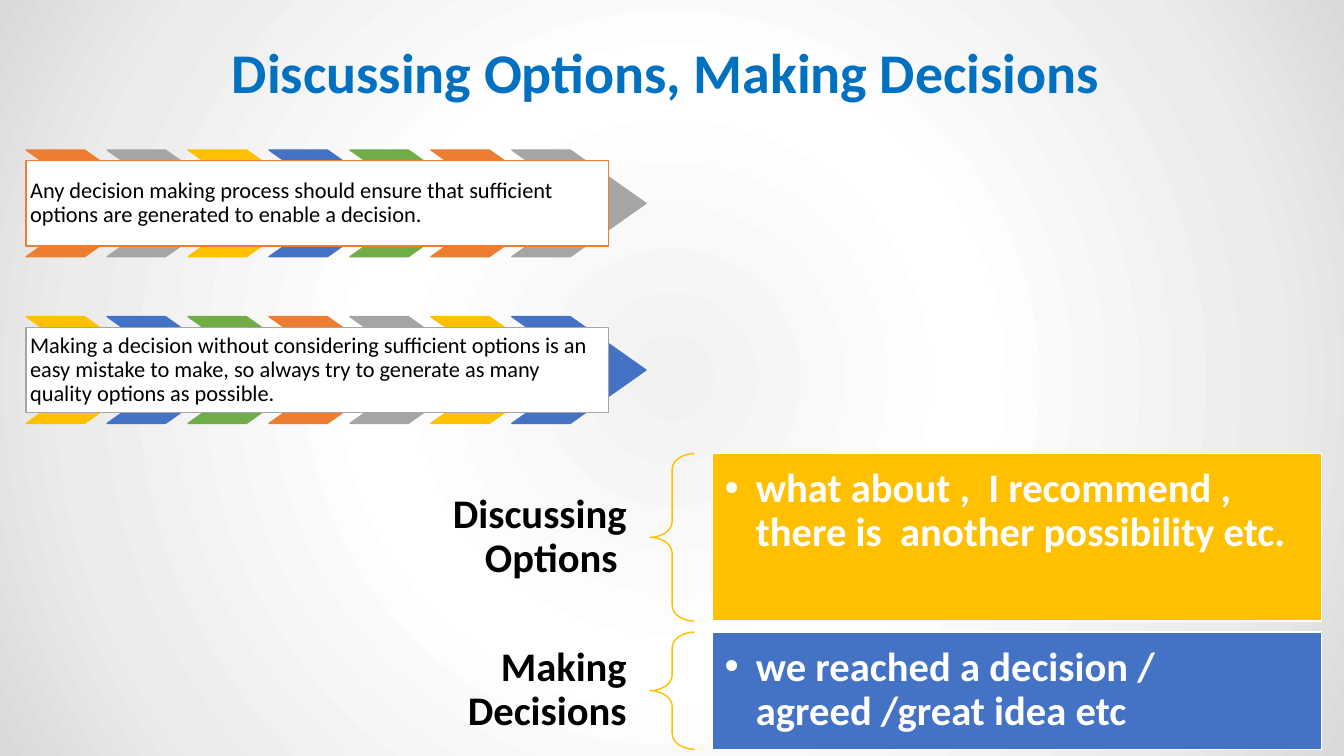
from pptx import Presentation
from pptx.dml.color import RGBColor
from pptx.enum.shapes import MSO_SHAPE as Preset
from pptx.enum.text import MSO_ANCHOR as Anchor, MSO_AUTO_SIZE as AutoSize, PP_ALIGN as Align
from pptx.oxml import parse_xml
from pptx.oxml.ns import nsdecls
from pptx.util import Cm, Pt

BLACK = RGBColor(0x00, 0x00, 0x00)
WHITE = RGBColor(0xFF, 0xFF, 0xFF)
TITLE_BLUE = RGBColor(0x00, 0x70, 0xC0)
ORANGE = RGBColor(0xED, 0x7D, 0x31)
GREY = RGBColor(0xA5, 0xA5, 0xA5)
YELLOW = RGBColor(0xFF, 0xC0, 0x00)
BLUE = RGBColor(0x44, 0x72, 0xC4)
GREEN = RGBColor(0x70, 0xAD, 0x47)
ACCENTS = [ORANGE, GREY, YELLOW, BLUE, GREEN]
BACKGROUND_STOPS = [
    (0, RGBColor(0xF2, 0xF2, 0xF2)),
    (39, WHITE),
    (78, RGBColor(0xEC, 0xEC, 0xEC)),
    (100, RGBColor(0xD9, 0xD9, 0xD9)),
]

FONT = "Calibri"
TWO_CONTENT_LAYOUT = 3
CHEVRON_COUNT = 7
CHEVRON_STEP = 2.04
ROW_LEFT = 0.66

# top in cm, first accent, box line, statement
STATEMENTS = [
    (3.78, 0, ORANGE,
     "Any decision making process should ensure that sufficient options "
     "are generated to enable a decision."),
    (7.98, 2, GREY,
     "Making a decision without considering sufficient options is an easy mistake "
     "to make, so always try to generate as many quality options as possible."),
]
# top and height in cm, label top, fill, label, phrases
PHRASE_GROUPS = [
    (11.43, 4.22, 12.19, YELLOW, "Discussing Options ",
     "what about ,  I recommend , there is  another possibility etc."),
    (15.93, 2.95, 16.05, BLUE, "Making Decisions",
     "we reached a decision / agreed /great idea etc"),
]


def set_radial_background(slide):
    stops = "".join(
        f'<a:gs pos="{position * 1000}"><a:srgbClr val="{color}"/></a:gs>'
        for position, color in BACKGROUND_STOPS)
    background = parse_xml(
        f'<p:bg {nsdecls("p", "a")}><p:bgPr><a:gradFill><a:gsLst>{stops}</a:gsLst>'
        '<a:path path="circle"><a:fillToRect l="50000" t="50000" r="50000" b="50000"/>'
        '</a:path></a:gradFill><a:effectLst/></p:bgPr></p:bg>')
    slide._element.cSld.insert(0, background)


def place(shape, left, top, width, height):
    shape.left, shape.top = Cm(left), Cm(top)
    shape.width, shape.height = Cm(width), Cm(height)


def paint(shape, fill, line):
    if fill is None:
        shape.fill.background()
    else:
        shape.fill.solid()
        shape.fill.fore_color.rgb = fill
    shape.line.color.rgb = line
    shape.line.width = Pt(1)


def add_preset(slide, preset, box, fill, line):
    shape = slide.shapes.add_shape(preset, *map(Cm, box))
    shape.shadow.inherit = False
    paint(shape, fill, line)
    return shape


def write(shape, text, size, color, bold=False, align=Align.LEFT,
          anchor=Anchor.MIDDLE, insets=(0.1, 0.1)):
    """Fill a shape with one paragraph; insets are horizontal and vertical, in cm."""
    frame = shape.text_frame
    frame.word_wrap = True
    frame.auto_size = AutoSize.NONE
    frame.vertical_anchor = anchor
    frame.margin_left = frame.margin_right = Cm(insets[0])
    frame.margin_top = frame.margin_bottom = Cm(insets[1])
    paragraph = frame.paragraphs[0]
    paragraph.alignment = align
    paragraph.line_spacing = 0.9
    paragraph.space_before = Pt(0)
    run = paragraph.add_run()
    run.text = text
    run.font.name = FONT
    run.font.size = Pt(size)
    run.font.bold = bold
    run.font.color.rgb = color
    return paragraph


def add_statement(slide, top, first_accent, line, text):
    """Draw a row of chevrons with a statement box across it."""
    for index in range(CHEVRON_COUNT):
        color = ACCENTS[(first_accent + index) % len(ACCENTS)]
        box = (ROW_LEFT + index * CHEVRON_STEP, top, 3.38, 2.69)
        chevron = add_preset(slide, Preset.CHEVRON, box, color, color)
        chevron.adjustments[0] = 0.71
    box = add_preset(slide, Preset.RECTANGLE, (ROW_LEFT, top + 0.27, 14.68, 2.15), WHITE, line)
    write(box, text, 16, BLACK)


def add_phrase_group(slide, body, top, height, label_top, fill, label, phrases):
    """Draw a label, its brace and the bulleted list of phrases."""
    label_box = slide.shapes.add_textbox(*map(Cm, (10.74, label_top, 5.64, 2.69)))
    write(label_box, label, 29, BLACK, bold=True, align=Align.RIGHT, insets=(0.58, 0.2))

    brace = add_preset(slide, Preset.LEFT_BRACE, (16.38, top, 1.12, height), None, YELLOW)
    brace.adjustments[0] = 0.35

    place(body, 17.96, top, 15.34, height)
    paint(body, fill, WHITE)
    paragraph = write(body, phrases, 29, WHITE, bold=True, anchor=Anchor.TOP,
                      insets=(0.3, 0.35))
    properties = paragraph._p.get_or_add_pPr()
    properties.set("marL", str(Cm(0.79)))
    properties.set("indent", str(-Cm(0.79)))
    properties.append(parse_xml(f'<a:buChar {nsdecls("a")} char="•"/>'))


def main():
    presentation = Presentation()
    presentation.slide_width, presentation.slide_height = Cm(33.87), Cm(19.05)
    slide = presentation.slides.add_slide(presentation.slide_layouts[TWO_CONTENT_LAYOUT])
    set_radial_background(slide)

    title, *bodies = slide.placeholders
    place(title, 2.33, 1.02, 29.21, 1.78)
    write(title, "Discussing Options, Making Decisions ", 40, TITLE_BLUE,
          bold=True, align=Align.CENTER)

    for statement in STATEMENTS:
        add_statement(slide, *statement)
    for body, group in zip(bodies, PHRASE_GROUPS):
        add_phrase_group(slide, body, *group)

    presentation.save("out.pptx")


if __name__ == "__main__":
    main()
